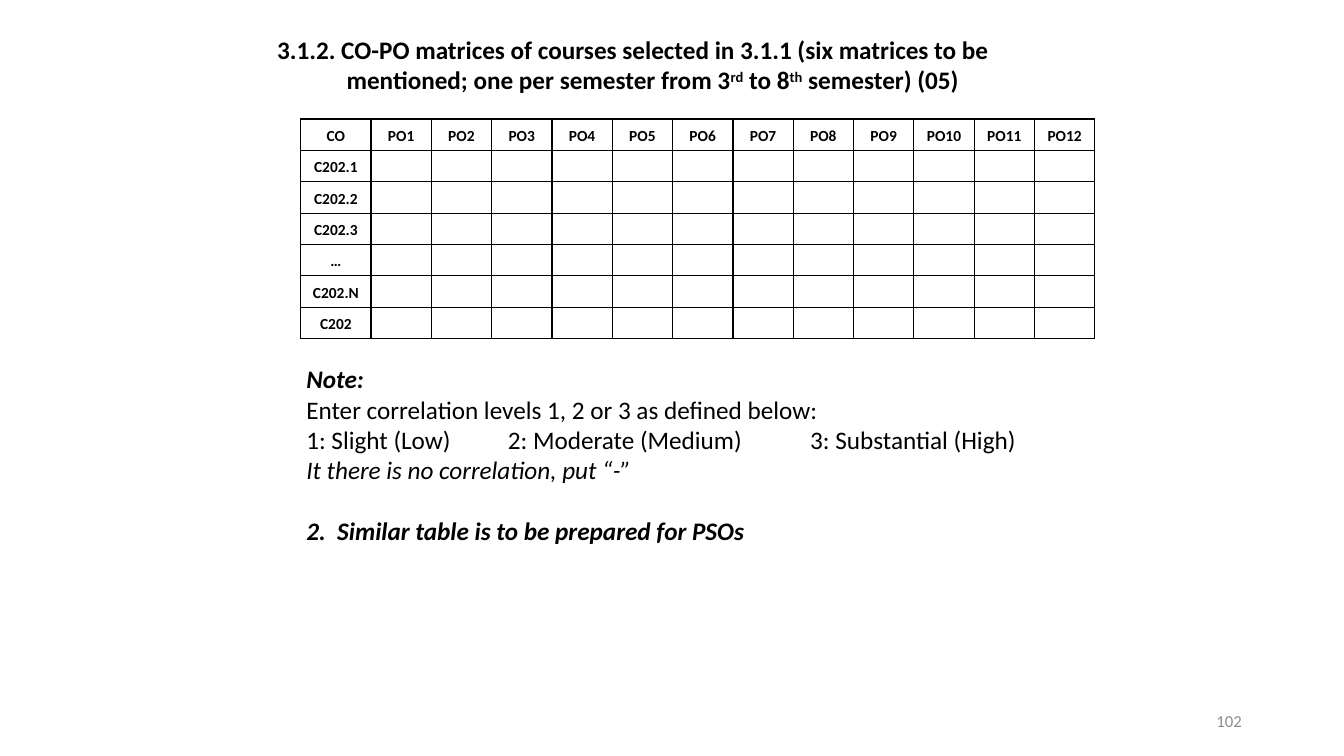
import pptx
import pptx.util
import pptx.dml.color
import pptx.enum.text
import pptx.oxml.ns
from lxml import etree

Cm = pptx.util.Cm
Pt = pptx.util.Pt
ALIGN = pptx.enum.text.PP_ALIGN
ANCHOR = pptx.enum.text.MSO_ANCHOR


def color(code):
    return pptx.dml.color.RGBColor.from_string(code)


def sub(node, tag, **attrs):
    """Append a drawing element with the given attributes."""
    child = etree.SubElement(node, pptx.oxml.ns.qn("a:" + tag))
    for name, value in attrs.items():
        child.set(name, str(value))
    return child


class Page:
    face = "Calibri"
    ink = "000000"
    gray = "8C8C8C"

    def __init__(self, deck):
        self.slide = deck.slides.add_slide(deck.slide_layouts[5])

    def style(self, run, size, bold=False, italic=False, ink=None):
        font = run.font
        font.name, font.size = self.face, Pt(size)
        font.bold, font.italic = bold, italic
        font.color.rgb = color(ink or self.ink)

    def title(self, box, parts):
        """Fill the title; parts are pairs of text and raised flag."""
        shape = self.slide.shapes.title
        shape.left, shape.top, shape.width, shape.height = map(Cm, box)
        frame = shape.text_frame
        frame.auto_size = pptx.enum.text.MSO_AUTO_SIZE.NONE
        frame.vertical_anchor = ANCHOR.TOP
        frame.margin_right = Cm(1)
        para = frame.paragraphs[0]
        para.alignment = ALIGN.LEFT
        props = para._p.get_or_add_pPr()
        props.set("marL", str(Cm(2.74)))
        props.set("indent", str(Cm(-1.75)))
        for text, raised in parts:
            run = para.add_run()
            run.text = text
            self.style(run, 18, bold=True)
            if raised:
                run._r.get_or_add_rPr().set("baseline", "30000")

    def text(self, box, lines, size, ink=None, align=ALIGN.LEFT,
             anchor=ANCHOR.TOP):
        """Add a text box; lines hold text, bold, italic and space before."""
        frame = self.slide.shapes.add_textbox(*map(Cm, box)).text_frame
        frame.word_wrap = True
        frame.vertical_anchor = anchor
        for i, (text, bold, italic, gap) in enumerate(lines):
            para = frame.add_paragraph() if i else frame.paragraphs[0]
            para.text = text
            para.alignment = align
            para.space_before = Pt(gap)
            for run in para.runs:
                self.style(run, size, bold, italic, ink)
            if "\t" in text:
                tabs = sub(para._p.get_or_add_pPr(), "tabLst")
                for stop in (5.08, 12.7):
                    sub(tabs, "tab", pos=Cm(stop), algn="l")

    def border(self, cell):
        props = cell._tc.get_or_add_tcPr()
        for side in ("lnL", "lnR", "lnT", "lnB"):
            line = sub(props, side, w=Pt(1))
            sub(sub(line, "solidFill"), "srgbClr", val=self.ink)

    def cell(self, cell, text):
        self.border(cell)
        cell.fill.background()
        cell.vertical_anchor = ANCHOR.MIDDLE
        cell.margin_left = cell.margin_right = Cm(0.05)
        cell.margin_top = cell.margin_bottom = Cm(0.05)
        para = cell.text_frame.paragraphs[0]
        para.alignment = ALIGN.CENTER
        if not text:
            sub(para._p, "endParaRPr", sz=1100)
            return
        para.text = text
        para.line_spacing = 1.15
        para.space_before = Pt(6)
        self.style(para.runs[0], 11, bold=True)

    def table(self, left, top, heads, names, first, other, tall):
        """Add a grid with a head row and a name column."""
        rows, cols = len(names) + 1, len(heads)
        wide = first + other * (cols - 1)
        grid = self.slide.shapes.add_table(
            rows, cols, Cm(left), Cm(top), Cm(wide), Cm(tall * rows)).table
        grid.first_row = grid.horz_banding = False
        for i, col in enumerate(grid.columns):
            col.width = Cm(other if i else first)
        for row in grid.rows:
            row.height = Cm(tall)
        blank = [""] * (cols - 1)
        for r, row in enumerate([heads] + [[name] + blank for name in names]):
            for c, text in enumerate(row):
                self.cell(grid.cell(r, c), text)


def main():
    deck = pptx.Presentation()
    deck.slide_width, deck.slide_height = Cm(33.87), Cm(19.05)
    page = Page(deck)

    # Heading
    page.title((5.74, 0.74, 22.61, 1.8), [
        ("3.1.2. CO-PO matrices of courses selected in 3.1.1 "
         "(six matrices to be mentioned; one per semester from 3", False),
        ("rd", True), (" to 8", False), ("th", True),
        (" semester) (05)", False)])

    # Matrix
    heads = ["CO"] + [f"PO{n}" for n in range(1, 13)]
    names = ["C202.1", "C202.2", "C202.3", "…", "C202.N", "C202"]
    page.table(7.58, 3, heads, names, first=1.77, other=1.52, tall=0.79)

    # Notes
    page.text((7.47, 9.04, 20.85, 4.88), [
        ("Note:", True, True, 0),
        ("Enter correlation levels 1, 2 or 3 as defined below:",
         False, False, 0),
        ("1: Slight (Low)\t2: Moderate (Medium)\t3: Substantial (High)",
         False, False, 0),
        ("It there is no correlation, put “-”", False, True, 0),
        ("2.  Similar table is to be prepared for PSOs", True, True, 21.7),
    ], 18)

    # Page number
    page.text((23.93, 17.65, 7.62, 1.02), [("102", False, False, 0)], 12,
              page.gray, ALIGN.RIGHT, ANCHOR.MIDDLE)

    deck.save("out.pptx")


if __name__ == "__main__":
    main()
